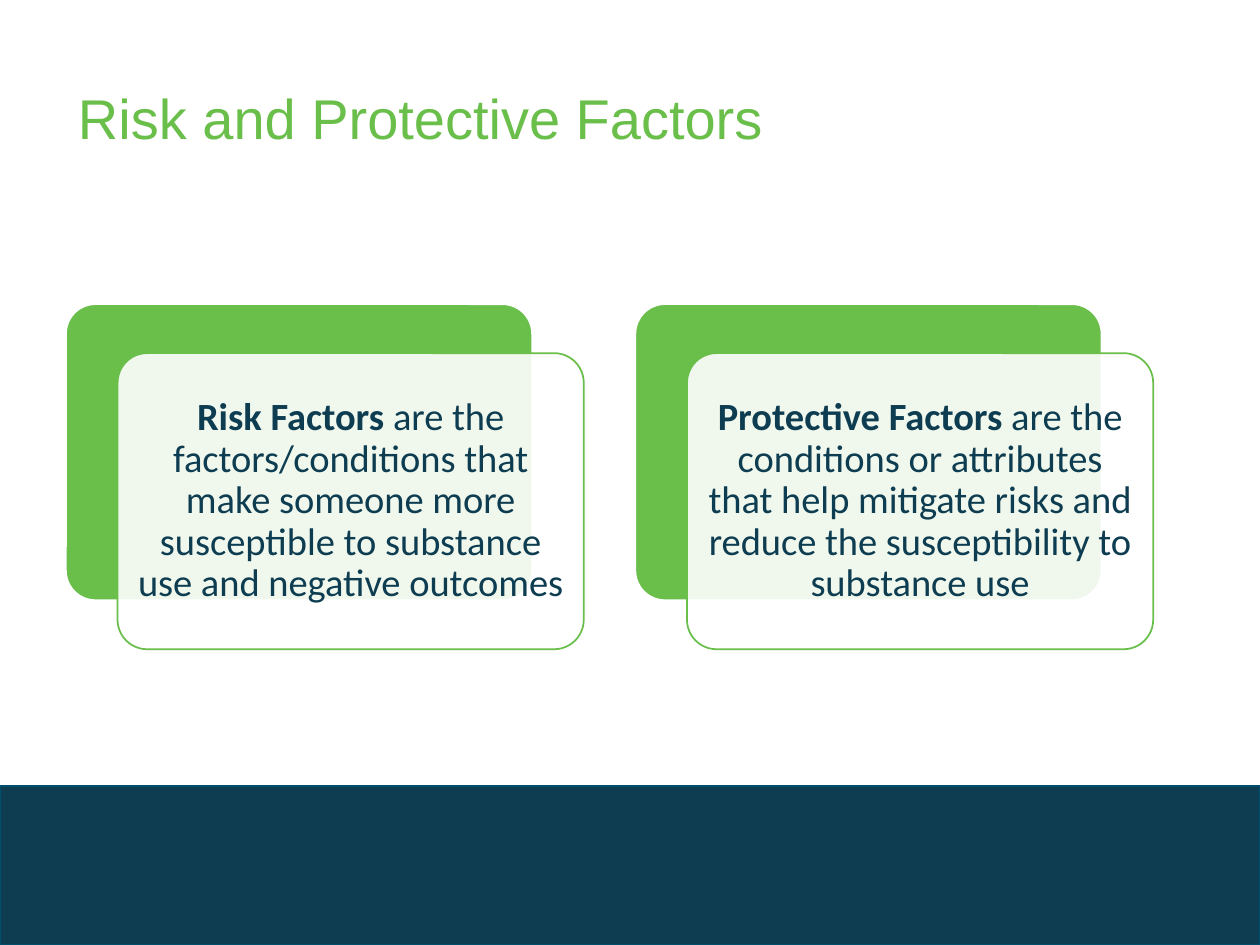
from lxml import etree
from pptx import Presentation
from pptx.dml.color import RGBColor
from pptx.enum import shapes, text
from pptx.oxml.ns import qn
from pptx.util import Pt

COLORS = {"green": "6ABF4B", "navy": "0E3D51", "edge": "004E6A", "white": "FFFFFF"}


class SlideBuilder:
    """Holds the style and the current slide."""

    title_font, body_font = "Arial", "Calibri"
    title_size, body_size = Pt(32), Pt(22)
    line_spacing = 0.9

    def __init__(self, page):
        self.page = page

    def color(self, name):
        return RGBColor.from_string(COLORS[name])

    def panel(self, kind, left, top, width, height, fill, line, opacity=100):
        shape = self.page.shapes.add_shape(
            kind, Pt(left), Pt(top), Pt(width), Pt(height))
        shape.shadow.inherit = False
        shape.fill.solid()
        shape.fill.fore_color.rgb = self.color(fill)
        shape.line.color.rgb = self.color(line)
        shape.line.width = Pt(1)
        if kind == shapes.MSO_SHAPE.ROUNDED_RECTANGLE:
            shape.adjustments[0] = 0.1
        if opacity < 100:
            tint = shape.fill._xPr.find(qn("a:solidFill"))[0]
            etree.SubElement(tint, qn("a:alpha"), val=str(opacity * 1000))
        return shape

    def text_box(self, left, top, width, height, margin=None):
        box = self.page.shapes.add_textbox(Pt(left), Pt(top), Pt(width), Pt(height))
        frame = box.text_frame
        frame.word_wrap = True
        frame.vertical_anchor = text.MSO_ANCHOR.MIDDLE
        if margin is not None:
            frame.margin_left = frame.margin_right = Pt(margin)
            frame.margin_top = frame.margin_bottom = Pt(margin)
        para = frame.paragraphs[0]
        para.line_spacing = self.line_spacing
        return para

    def style(self, para, font, size, color):
        para.font.name = font
        para.font.size = size
        para.font.color.rgb = self.color(color)

    def title(self, words, left, top, width, height):
        para = self.text_box(left, top, width, height)
        para.add_run().text = words
        self.style(para, self.title_font, self.title_size, "green")

    def card(self, left, top, term, meaning):
        width, height, inset = 266.4, 169.2, 5
        front_left, front_top = left + 29.5, top + 28
        rounded = shapes.MSO_SHAPE.ROUNDED_RECTANGLE
        self.panel(rounded, left, top, width, height, "green", "white")
        self.panel(rounded, front_left, front_top, width, height,
                   "white", "green", opacity=90)
        para = self.text_box(front_left + inset, front_top + inset,
                             width - 2 * inset, height - 2 * inset, margin=6.6)
        para.alignment = text.PP_ALIGN.CENTER
        self.style(para, self.body_font, self.body_size, "navy")
        span = para.add_run()
        span.text = term
        span.font.bold = True
        para.add_run().text = meaning


def main():
    deck = Presentation()
    deck.slide_width, deck.slide_height = Pt(720), Pt(540)
    page = deck.slides.add_slide(deck.slide_layouts[6])
    builder = SlideBuilder(page)

    # Footer band
    builder.panel(shapes.MSO_SHAPE.RECTANGLE, 0, 449, 720, 115 - 24, "navy", "edge")

    # Title
    builder.title("Risk and Protective Factors", 37.5, 28.8, 590, 80.6)

    # Definition cards
    cards = [
        ("Risk Factors", " are the factors/conditions that make someone more "
                         "susceptible to substance use and negative outcomes"),
        ("Protective Factors", " are the conditions or attributes that help mitigate "
                               "risks and reduce the susceptibility to substance use"),
    ]
    first_left, card_pitch = 37.7, 325.4
    for index, (term, meaning) in enumerate(cards):
        builder.card(first_left + index * card_pitch, 173.8, term, meaning)

    deck.save("out.pptx")


if __name__ == "__main__":
    main()
